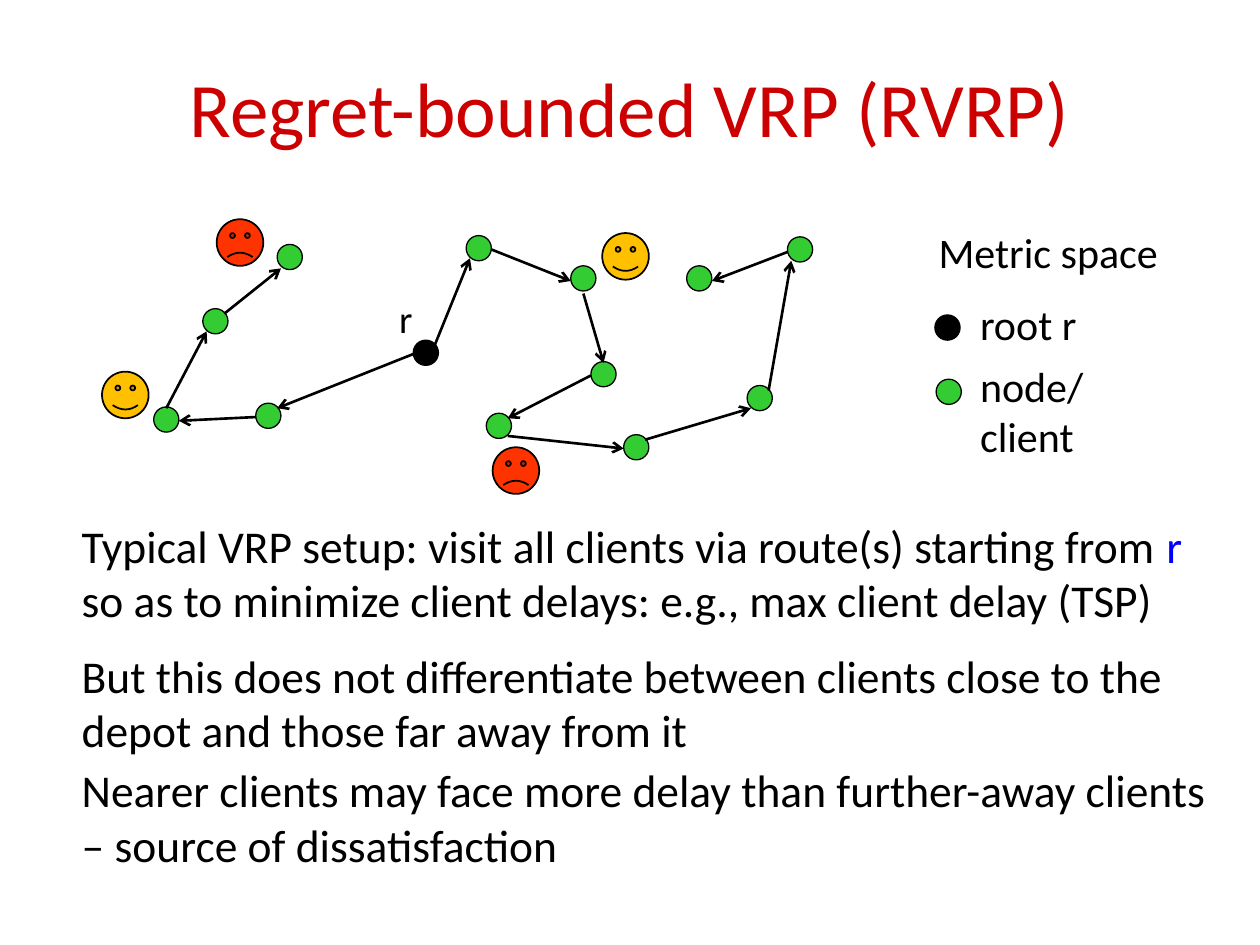
from pptx import Presentation
from pptx.dml.color import RGBColor
from pptx.enum.shapes import MSO_CONNECTOR, MSO_SHAPE
from pptx.enum.text import MSO_ANCHOR, PP_ALIGN
from pptx.oxml.ns import qn
from pptx.util import Inches, Pt
from lxml import etree

OVAL, SMILEY = MSO_SHAPE.OVAL, MSO_SHAPE.SMILEY_FACE
STRAIGHT = MSO_CONNECTOR.STRAIGHT
TOP, MIDDLE = MSO_ANCHOR.TOP, MSO_ANCHOR.MIDDLE
LEFT, CENTER = PP_ALIGN.LEFT, PP_ALIGN.CENTER

THEME = {
    "font": "Calibri",
    "title": "CC0000", "ink": "000000", "root": "0000FF",
    "client": "33CC33", "happy": "FFC000", "unhappy": "FF3300",
    "title_size": 44, "body_size": 26, "legend_size": 24, "root_size": 22,
    "node_line": 0.75, "face_line": 1, "route_line": 1.5,
}
NODE, FACE = 0.2, 0.37
FROWN = -0.047

TITLE = "Regret-bounded VRP (RVRP)"
BODY = [
    (0, [("Typical VRP setup: visit all clients via route(s) starting from ", "ink"),
         ("r", "root"),
         (" so as to minimize client delays: e.g., max client delay (TSP)", "ink")]),
    (12, [("But this does not differentiate between clients close to the "
           "depot and those far away from it", "ink")]),
    (3, [("Nearer clients may face more delay than further-away clients "
          "– source of dissatisfaction", "ink")]),
]
LABELS = [
    ("Metric space", (7.35, 1.75, 2.15, 0.52), "legend_size"),
    ("root r", (7.68, 2.32, 2.2, 0.5), "legend_size"),
    ("node/client", (7.68, 2.81, 1.7, 0.5), "legend_size"),
    ("r", (3.07, 2.29, 0.42, 0.47), "root_size"),
]
NODES = {
    "client": [
        (2.03, 3.2), (1.22, 3.23), (1.61, 2.45), (2.2, 1.94),
        (3.7, 1.87), (4.53, 2.11), (4.69, 2.87), (3.86, 3.28),
        (4.95, 3.45), (5.93, 3.06), (6.25, 1.88), (5.45, 2.11),
        (7.43, 3.01),
    ],
    "ink": [(3.28, 2.7), (7.42, 2.5)],
}
FACES = {
    "happy": [(0.81, 2.95), (4.78, 1.85)],
    "unhappy": [(1.72, 1.74), (3.91, 3.55)],
}
ROUTES = {
    "left": [
        ((3.28, 2.81), (2.2, 3.24)), ((2.03, 3.31), (1.42, 3.34)),
        ((1.32, 3.24), (1.64, 2.63)), ((1.78, 2.49), (2.23, 2.13)),
    ],
    "right": [
        ((3.45, 2.74), (3.73, 2.05)), ((3.9, 1.98), (4.53, 2.23)),
        ((4.63, 2.33), (4.79, 2.88)), ((4.69, 2.98), (4.03, 3.32)),
        ((4.03, 3.46), (4.95, 3.56)), ((5.12, 3.49), (5.96, 3.24)),
        ((6.1, 3.1), (6.28, 2.07)), ((6.25, 2), (5.65, 2.23)),
    ],
}


def color(key):
    return RGBColor.from_string(THEME[key])


def add_text(slide, box, paragraphs, size, anchor=TOP, align=LEFT):
    frame = slide.shapes.add_textbox(*map(Inches, box)).text_frame
    frame.word_wrap = True
    frame.vertical_anchor = anchor
    for index, (space, runs) in enumerate(paragraphs):
        paragraph = frame.add_paragraph() if index else frame.paragraphs[0]
        paragraph.alignment = align
        paragraph.space_before = Pt(space)
        for words, ink in runs:
            run = paragraph.add_run()
            run.text = words
            for attribute, value in {"name": THEME["font"], "size": Pt(THEME[size])}.items():
                setattr(run.font, attribute, value)
            run.font.color.rgb = color(ink)


def add_marker(slide, preset, corner, side, fill, width):
    marker = slide.shapes.add_shape(preset, *map(Inches, (*corner, side, side)))
    marker.shadow.inherit = False
    marker.fill.solid()
    marker.fill.fore_color.rgb = color(fill)
    marker.line.color.rgb = color("ink")
    marker.line.width = Pt(THEME[width])
    return marker


def add_leg(slide, start, end):
    leg = slide.shapes.add_connector(STRAIGHT, *map(Inches, (*start, *end)))
    leg.line.color.rgb = color("ink")
    leg.line.width = Pt(THEME["route_line"])
    etree.SubElement(leg.line._get_or_add_ln(), qn("a:tailEnd"), type="arrow")
    etree.SubElement(leg._element.spPr, qn("a:effectLst"))


def main():
    deck = Presentation()
    deck.slide_width, deck.slide_height = Inches(10), Inches(7.5)
    slide = deck.slides.add_slide(deck.slide_layouts[6])

    add_text(slide, (0.75, 0.39, 8.5, 0.92), [(0, [(TITLE, "title")])],
             "title_size", MIDDLE, CENTER)
    for fill, corners in NODES.items():
        for corner in corners:
            add_marker(slide, OVAL, corner, NODE, fill, "node_line")
    add_text(slide, (0.55, 4.06, 9.25, 2.94), BODY, "body_size")
    for legs in ROUTES.values():
        for start, end in legs:
            add_leg(slide, start, end)
    for mood, corners in FACES.items():
        for corner in corners:
            face = add_marker(slide, SMILEY, corner, FACE, mood, "face_line")
            if mood == "unhappy":
                face.adjustments[0] = FROWN
    for words, box, size in LABELS:
        add_text(slide, box, [(0, [(words, "ink")])], size)

    deck.save("out.pptx")


if __name__ == "__main__":
    main()
